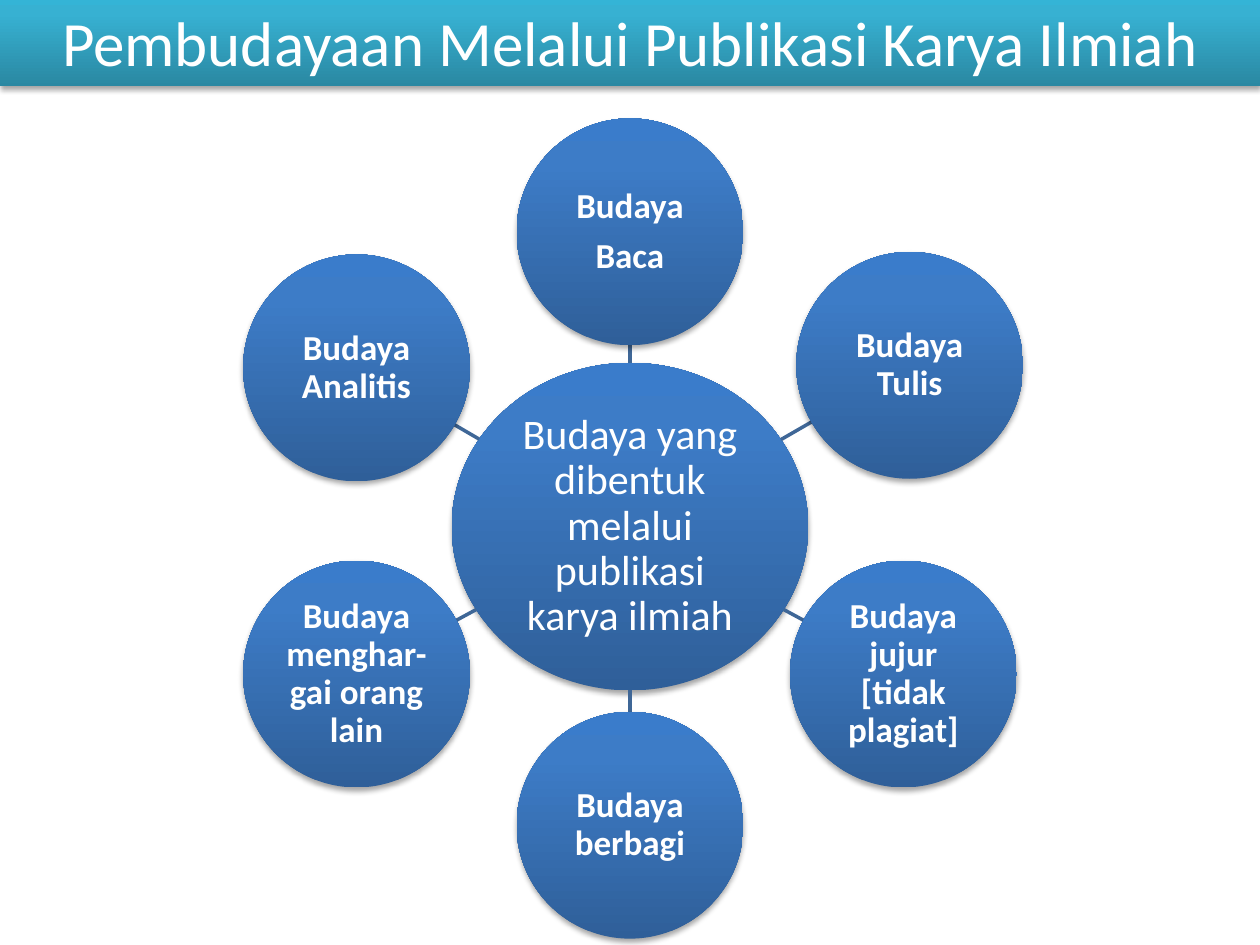
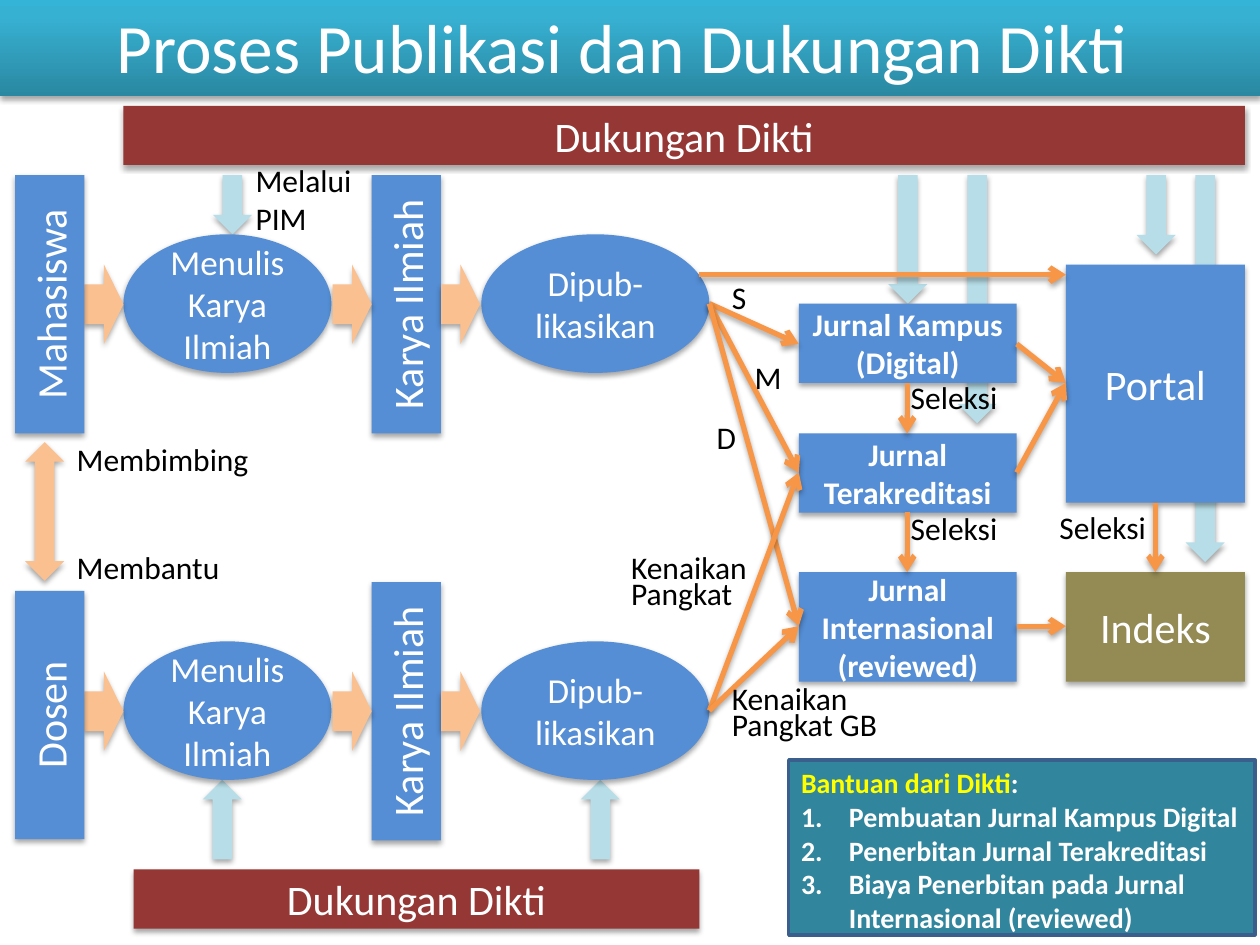
from dataclasses import dataclass
from math import hypot
from typing import NamedTuple, Sequence

from lxml.etree import SubElement
from copy import deepcopy
from pptx import Presentation
from pptx.dml.color import RGBColor
from pptx.enum.shapes import MSO_CONNECTOR as Connector, MSO_SHAPE as Kind
from pptx.enum.text import MSO_ANCHOR as Anchor, MSO_AUTO_SIZE as AutoSize, PP_ALIGN as Align
from pptx.oxml.ns import qn
from pptx.util import Inches, Pt

FONT = "Calibri"
COLORS = {
    "white": "FFFFFF", "black": "000000", "yellow": "FFFF00",
    "blue": "558ED5", "olive": "948A54", "maroon": "953735", "teal": "31859C",
    "teal_border": "3A5F8C", "support": "B7DEE8", "flow": "FAC090",
    "arrow": "F79646", "spoke": "3F6797",
}
# Gradient stops run from the bottom edge to the top edge
STOP_POSITIONS = (0, 0.8, 1)
GRADIENTS = {
    "title": ("2A88A2", "37B1D2", "34B4D6"),
    "circle": ("2F5F99", "3D7CC7", "3A7CCB"),
}
HUB_CENTER = (5, 4.18)
HUB_RADII = (1.415, 1.3)
CIRCLE_RADIUS = 0.9
LANES = (2.41, 5.64)
ARROW_THICK = 0.31


class Span(NamedTuple):
    text: str
    color: str


@dataclass(frozen=True)
class Block:
    left: float
    top: float
    width: float
    height: float
    text: str = ""
    fill: str = "blue"
    size: float = 24
    bold: bool = False
    kind: Kind = Kind.RECTANGLE
    vertical: bool = False


class Label(NamedTuple):
    left: float
    top: float
    width: float
    lines: tuple[str, ...]
    height: float = 0.4
    spacing: float | None = None
    wrap: bool = False


class Satellite(NamedTuple):
    x: float
    y: float
    lines: tuple[str, ...]


SATELLITES = (
    Satellite(5, 1.84, ("Budaya", "Baca")),
    Satellite(7.22, 2.9, ("Budaya Tulis",)),
    Satellite(7.17, 5.35, ("Budaya jujur [tidak plagiat]",)),
    Satellite(5, 6.55, ("Budaya berbagi",)),
    Satellite(2.83, 5.35, ("Budaya menghar-gai orang lain",)),
    Satellite(2.83, 2.92, ("Budaya Analitis",)),
)


def support_arrow(left: float, top: float, height: float, kind: Kind = Kind.DOWN_ARROW) -> Block:
    return Block(left, top, ARROW_THICK, height, fill="support", kind=kind)


SUPPORT_ARROWS = (
    *(support_arrow(left, 1.39, height) for left, height in
      ((9.41, 3.07), (7.6, 1.97), (7.05, 1.02), (9.02, 0.63), (1.69, 0.47))),
    *(support_arrow(left, 6.19, 0.63, Kind.UP_ARROW) for left in (1.61, 4.61)),
)
BLOCKS = (
    Block(0.98, 0.84, 8.9, 0.47, "Dukungan Dikti", "maroon"),
    Block(1.06, 6.9, 4.49, 0.47, "Dukungan Dikti", "maroon"),
    Block(0.12, 1.39, 0.55, 2.05, "Mahasiswa", vertical=True),
    Block(0.12, 4.69, 0.55, 1.97, "Dosen", vertical=True),
    Block(0.2, 3.51, ARROW_THICK, 1.1, fill="flow", kind=Kind.UP_DOWN_ARROW),
    Block(6.34, 2.41, 1.73, 0.63, "Jurnal Kampus (Digital)", size=18, bold=True),
    Block(6.34, 3.44, 1.73, 0.63, "Jurnal Terakreditasi", size=18, bold=True),
    Block(6.34, 4.54, 1.73, 0.87, "Jurnal Internasional (reviewed)", size=18, bold=True),
    Block(8.46, 2.1, 1.42, 1.89, "Portal"),
    Block(8.46, 4.54, 1.42, 0.87, "Indeks", "olive"),
)
STUDENT_EXIT, LECTURER_EXIT = ((5.63, middle) for middle in LANES)
CAMPUS, ACCREDITED, INTERNATIONAL = ((6.34, y) for y in (2.73, 3.75, 4.97))
PORTAL = (8.46, 3.04)
ARROWS = (
    *((STUDENT_EXIT, journal) for journal in (CAMPUS, ACCREDITED, INTERNATIONAL)),
    *((LECTURER_EXIT, journal) for journal in (ACCREDITED, INTERNATIONAL)),
    ((7.2, 3.04), (7.2, 3.44)),
    ((7.2, 4.06), (7.2, 4.54)),
    ((8.07, 2.73), PORTAL),
    ((8.07, 3.75), PORTAL),
    ((8.07, 4.97), (8.46, 4.97)),
    ((9.17, 3.99), (9.17, 4.54)),
    ((5.55, 2.18), (8.46, 2.18)),
)
LABELS = (
    Label(0.51, 3.44, 1.58, ("Membimbing",)),
    Label(0.51, 4.3, 1.35, ("Membantu",)),
    Label(7.13, 2.95, 0.9, ("Seleksi",)),
    Label(7.13, 3.99, 0.9, ("Seleksi",)),
    Label(8.31, 3.98, 0.9, ("Seleksi",)),
    Label(5.71, 2.16, 0.32, ("S",)),
    Label(5.89, 2.79, 0.42, ("M",)),
    Label(5.59, 3.27, 0.36, ("D",)),
    Label(4.91, 4.38, 1.19, ("Kenaikan", "Pangkat"), 0.54, 0.7),
    Label(5.71, 5.42, 1.37, ("Kenaikan", "Pangkat GB"), 0.54, 0.7),
    Label(1.93, 1.23, 1.02, ("Melalui PIM",), 0.71, wrap=True),
)
AID_LINES = (
    (Span("Bantuan dari Dikti", "yellow"), Span(":", "white")),
    "Pembuatan Jurnal Kampus Digital",
    "Penerbitan Jurnal Terakreditasi",
    "Biaya Penerbitan pada Jurnal Internasional (reviewed)",
)


def rgb(name: str) -> RGBColor:
    return RGBColor.from_string(COLORS[name])


def write_text(frame, lines: Sequence, *, size: float, color: str = "white", bold: bool = False,
               align: Align = Align.CENTER, anchor: Anchor = Anchor.MIDDLE, wrap: bool = True,
               spacing: float | None = None, after: float | None = None,
               inset: float | None = None) -> None:
    """Write one paragraph per line; a line is a string or a tuple of spans."""
    frame.word_wrap = wrap
    frame.vertical_anchor = anchor
    if inset is not None:
        frame.margin_left = frame.margin_right = Inches(inset)
        frame.margin_top = frame.margin_bottom = Inches(inset)
    for index, line in enumerate(lines):
        para = frame.add_paragraph() if index else frame.paragraphs[0]
        para.alignment = align
        if spacing is not None:
            para.line_spacing = spacing
        if after is not None:
            para.space_after = Pt(after)
        for span in (Span(line, color),) if isinstance(line, str) else line:
            run = para.add_run()
            run.text = span.text
            run.font.name, run.font.size, run.font.bold = FONT, Pt(size), bold
            run.font.color.rgb = rgb(span.color)


def add_shadow(shape) -> None:
    properties = shape._element.spPr
    effects = properties.find(qn("a:effectLst"))
    if effects is None:
        effects = SubElement(properties, qn("a:effectLst"))
    shadow = SubElement(effects, qn("a:outerShdw"), blurRad="40000", dist="23000",
                        dir="5400000", rotWithShape="0")
    color = SubElement(shadow, qn("a:srgbClr"), val=COLORS["black"])
    SubElement(color, qn("a:alpha"), val="35000")


def add_block(page, block: Block, shadow: bool = True):
    """Draw a borderless shape; its fill names a gradient or a plain colour."""
    shape = page.shapes.add_shape(block.kind, Inches(block.left), Inches(block.top),
                                  Inches(block.width), Inches(block.height))
    shape.shadow.inherit = False
    shape.line.fill.background()
    if block.fill in GRADIENTS:
        shape.fill.gradient()
        shape.fill.gradient_angle = 90
        stop_list = shape._element.spPr.find(qn("a:gradFill")).find(qn("a:gsLst"))
        stop_list.append(deepcopy(stop_list[-1]))
        for stop, position, color in zip(shape.fill.gradient_stops, STOP_POSITIONS,
                                         GRADIENTS[block.fill]):
            stop.position = position
            stop.color.rgb = RGBColor.from_string(color)
    else:
        shape.fill.solid()
        shape.fill.fore_color.rgb = rgb(block.fill)
    if shadow:
        add_shadow(shape)
    if block.text:
        write_text(shape.text_frame, [block.text], size=block.size, bold=block.bold)
    if block.vertical:
        shape.text_frame._txBody.bodyPr.set("vert", "vert270")
    return shape


def add_line(page, start: tuple, end: tuple, color: str, width: float, arrow: bool = False) -> None:
    line = page.shapes.add_connector(Connector.STRAIGHT, *map(Inches, (*start, *end)))
    line.line.color.rgb = rgb(color)
    line.line.width = Pt(width)
    SubElement(line._element.spPr, qn("a:effectLst"))
    if arrow:
        SubElement(line.line._get_or_add_ln(), qn("a:tailEnd"), type="arrow")
        add_shadow(line)


def add_label(page, label: Label) -> None:
    box = page.shapes.add_textbox(Inches(label.left), Inches(label.top),
                                  Inches(label.width), Inches(label.height))
    write_text(box.text_frame, label.lines, size=18, color="black", align=Align.LEFT,
               anchor=Anchor.TOP, wrap=label.wrap, spacing=label.spacing)
    box.text_frame.auto_size = AutoSize.SHAPE_TO_FIT_TEXT


def add_title(page, text: str, height: float, size: float) -> None:
    add_block(page, Block(0, -0.03, 10, height, text, "title", size))


def add_circle(page, center: tuple, radii: tuple, lines: Sequence[str], **text_format) -> None:
    (x, y), (across, down) = center, radii
    circle = add_block(page, Block(x - across, y - down, 2 * across, 2 * down,
                                   fill="circle", kind=Kind.OVAL))
    write_text(circle.text_frame, lines, spacing=0.9, **text_format)


def add_spoke(page, satellite: Satellite) -> None:
    """Join the hub's edge to the satellite's edge along the line of centres."""
    hub_x, hub_y = HUB_CENTER
    across, down = satellite.x - hub_x, satellite.y - hub_y
    distance = hypot(across, down)
    hub_share = 1 / hypot(across / HUB_RADII[0], down / HUB_RADII[1])
    start, end = ((hub_x + share * across, hub_y + share * down)
                  for share in (hub_share, 1 - CIRCLE_RADIUS / distance))
    add_line(page, start, end, "spoke", 2)


def add_lane(page, middle: float) -> None:
    """Draw the steps from writing to publishing on one horizontal axis."""
    for left, width, text in ((0.98, 1.65, "Menulis Karya Ilmiah"), (3.82, 1.81, "Dipub-likasikan")):
        add_block(page, Block(left, middle - 0.55, width, 1.1, text, size=20, kind=Kind.OVAL))
    add_block(page, Block(2.95, middle - 1.02, 0.55, 2.05, "Karya Ilmiah", vertical=True))
    for left in (0.67, 2.64, 3.5):
        add_block(page, Block(left, middle - 0.31, ARROW_THICK, 0.63, fill="flow",
                              kind=Kind.RIGHT_ARROW))


def add_aid_box(page) -> None:
    box = add_block(page, Block(6.26, 6.03, 3.7, 1.39, fill="teal"), shadow=False)
    box.line.color.rgb = rgb("teal_border")
    box.line.width = Pt(2)
    write_text(box.text_frame, AID_LINES, size=16, bold=True, align=Align.LEFT, anchor=Anchor.TOP)
    indent = Inches(0.38)
    for para in box.text_frame.paragraphs[1:]:
        properties = para._p.get_or_add_pPr()
        properties.set("marL", str(indent))
        properties.set("indent", str(-indent))
        SubElement(properties, qn("a:buAutoNum"), type="arabicPeriod")


def build_culture_page(page) -> None:
    add_title(page, "Pembudayaan Melalui Publikasi Karya Ilmiah", 0.71, 36)
    add_circle(page, HUB_CENTER, HUB_RADII, ["Budaya yang dibentuk melalui publikasi karya ilmiah"],
               size=24, after=8.4, inset=0.02)
    for satellite in SATELLITES:
        add_spoke(page, satellite)
        add_circle(page, (satellite.x, satellite.y), (CIRCLE_RADIUS, CIRCLE_RADIUS),
                   satellite.lines, size=20, bold=True, after=7, inset=0.01)


def build_process_page(page) -> None:
    for arrow in SUPPORT_ARROWS:
        add_block(page, arrow)
    add_title(page, "Proses Publikasi dan Dukungan Dikti ", 0.79, 39.6)
    for middle in LANES:
        add_lane(page, middle)
    for block in BLOCKS:
        add_block(page, block)
    for start, end in ARROWS:
        add_line(page, start, end, "arrow", 3, arrow=True)
    for label in LABELS:
        add_label(page, label)
    add_aid_box(page)


def main() -> None:
    deck = Presentation()
    deck.slide_width, deck.slide_height = Inches(10), Inches(7.5)
    for build_page in (build_culture_page, build_process_page):
        build_page(deck.slides.add_slide(deck.slide_layouts[6]))
    deck.save("out.pptx")


if __name__ == "__main__":
    main()
